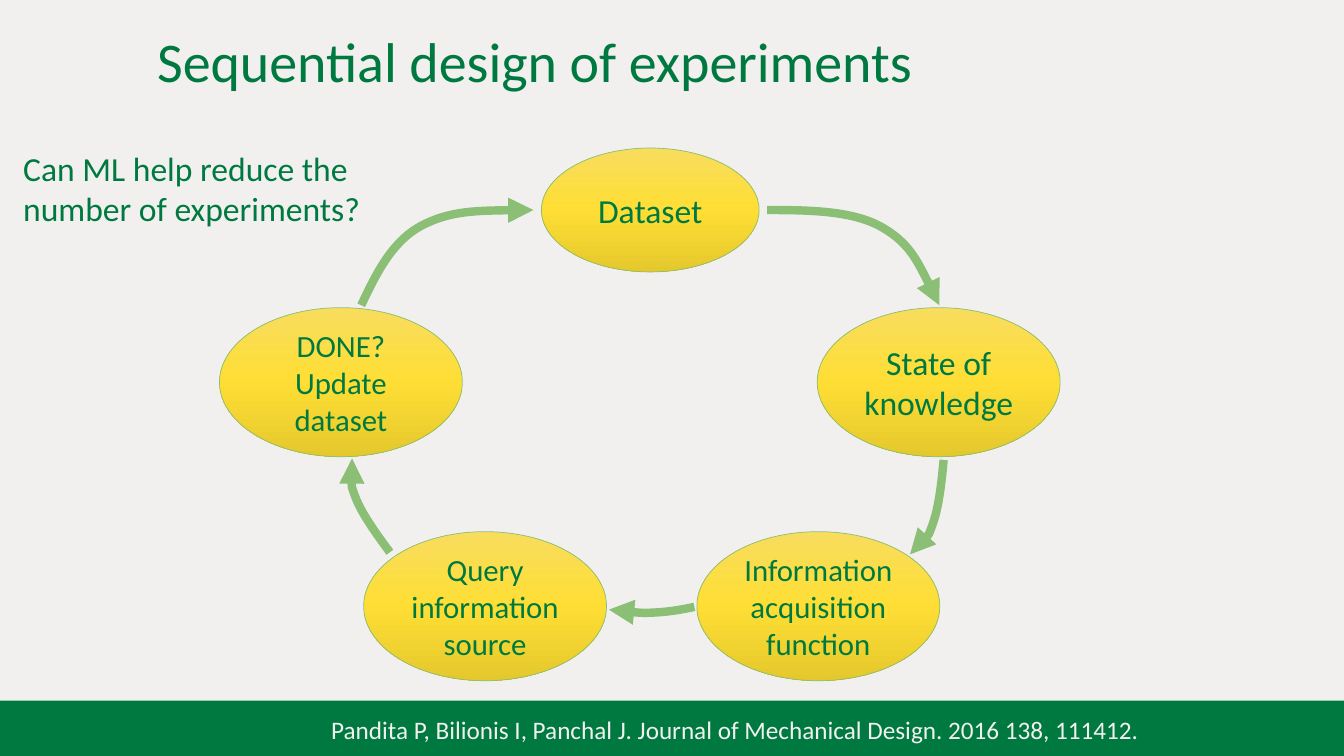
from copy import deepcopy

from lxml import etree
from pptx import Presentation
from pptx.dml import color
from pptx.enum import shapes, text
from pptx.oxml import ns
from pptx.util import Pt

GREEN = "007940"
LEAF = "8ABF75"
PAPER = "F1F0EF"
GOLD = ["F8DD5E", "FEDE35", "E5C82C"]
WIDTH, HEIGHT = 960, 540
LARGE = (173.5, 106.5)

STAGES = [
    ("Dataset", (464.5, 150), (155.5, 88.5), 24),
    ("State of knowledge", (670.5, 273), LARGE, 24),
    ("Information acquisition function", (584.5, 433), LARGE, 22),
    ("Query information source", (346.5, 433), LARGE, 22),
    ("DONE?\nUpdate dataset", (243.5, 273), LARGE, 22),
]
DATASET_TO_STATE = [(548, 150), (578, 150), (608, 150.5), (628.5, 161.5),
                    (649.5, 173), (660.5, 196), (671, 218)]
DONE_TO_DATASET = [(929 - x, y) for x, y in reversed(DATASET_TO_STATE)]
ARROWS = [
    DATASET_TO_STATE,
    [(674, 328.5), (672.5, 345.5), (670.5, 362), (666.5, 373.5),
     (662.5, 385), (656, 391), (650, 396)],
    [(496, 433.5), (486.5, 435.5), (478, 437), (468, 437.5),
     (458, 438), (446.5, 437), (435, 435.5)],
    [(278.5, 394.5), (268.5, 381), (258.5, 367), (254, 355.5),
     (250, 345), (250.5, 336), (251.5, 327.5)],
    DONE_TO_DATASET,
]


def rgb(value):
    return color.RGBColor.from_string(value)


def points(*lengths):
    return [Pt(length) for length in lengths]


def write(shape, words, size, ink=GREEN, align=text.PP_ALIGN.LEFT,
          anchor=text.MSO_ANCHOR.TOP, wrap=True):
    frame = shape.text_frame
    frame.text = words
    frame.word_wrap = wrap
    frame.auto_size = text.MSO_AUTO_SIZE.NONE
    frame.vertical_anchor = anchor
    for paragraph in frame.paragraphs:
        paragraph.alignment = align
        paragraph.font.name = "Calibri"
        paragraph.font.size = Pt(size)
        paragraph.font.color.rgb = rgb(ink)


def add_title(slide, left, top, width, height):
    title = slide.shapes.title
    title.left, title.top, title.width, title.height = points(left, top, width, height)
    write(title, "Sequential design of experiments", 40)


def add_question(slide, left, top, width, height):
    question = slide.shapes.add_textbox(*points(left, top, width, height))
    write(question, "Can ML help reduce the number of experiments?", 24)


def add_footer(slide, left, top, width, height):
    bar = slide.shapes.add_shape(shapes.MSO_SHAPE.RECTANGLE, *points(left, top, width, height))
    bar.shadow.inherit = False
    bar.fill.solid()
    bar.fill.fore_color.rgb = rgb(GREEN)
    bar.line.fill.background()
    citation = slide.shapes.add_textbox(*points(left + 229.5, top + 6, 595, 29))
    write(citation, "Pandita P, Bilionis I, Panchal J. Journal of Mechanical Design. "
          "2016 138, 111412.", 18, PAPER, wrap=False)


def fill_gold(shape):
    shape.fill.gradient()
    shape.fill.gradient_angle = 270
    stop_list = shape._element.spPr.find(".//" + ns.qn("a:gsLst"))
    stop_list.insert(1, deepcopy(stop_list[0]))
    for index, stop in enumerate(shape.fill.gradient_stops):
        stop.color.rgb = rgb(GOLD[index])
        stop.position = index / 2


def add_stage(slide, words, center, size, font_size):
    left, top = (middle - length / 2 for middle, length in zip(center, size))
    stage = slide.shapes.add_shape(shapes.MSO_SHAPE.OVAL, *points(left, top, *size))
    stage.shadow.inherit = False
    fill_gold(stage)
    stage.line.color.rgb = rgb(LEAF)
    stage.line.width = Pt(0.5)
    write(stage, words, font_size, align=text.PP_ALIGN.CENTER,
          anchor=text.MSO_ANCHOR.MIDDLE)


def bend(shape):
    outline = shape._element.spPr.find(".//" + ns.qn("a:path"))
    segments = outline.findall(ns.qn("a:lnTo"))
    for start in range(0, len(segments), 3):
        curve = etree.SubElement(outline, ns.qn("a:cubicBezTo"))
        for segment in segments[start:start + 3]:
            curve.append(segment[0])
            outline.remove(segment)


def add_arrow(slide, curve):
    start, *others = [points(*point) for point in curve]
    builder = slide.shapes.build_freeform(*start)
    builder.add_line_segments(others, close=False)
    arrow = builder.convert_to_shape()
    bend(arrow)
    arrow.shadow.inherit = False
    arrow.fill.background()
    arrow.line.color.rgb = rgb(LEAF)
    arrow.line.width = Pt(6)
    line = arrow._element.spPr.find(ns.qn("a:ln"))
    etree.SubElement(line, ns.qn("a:tailEnd"), type="triangle")


def add_cycle(slide):
    for stage in STAGES:
        add_stage(slide, *stage)
    for curve in ARROWS:
        add_arrow(slide, curve)


def main():
    presentation = Presentation()
    presentation.slide_width, presentation.slide_height = points(WIDTH, HEIGHT)
    slide = presentation.slides.add_slide(presentation.slide_layouts[5])
    slide.background.fill.solid()
    slide.background.fill.fore_color.rgb = rgb(PAPER)
    add_footer(slide, 0, 500.5, WIDTH, 39.5)
    add_title(slide, 105, 15, 718.5, 55.5)
    add_cycle(slide)
    add_question(slide, 9.5, 102, 261.5, 65.5)
    presentation.save("out.pptx")


if __name__ == "__main__":
    main()
